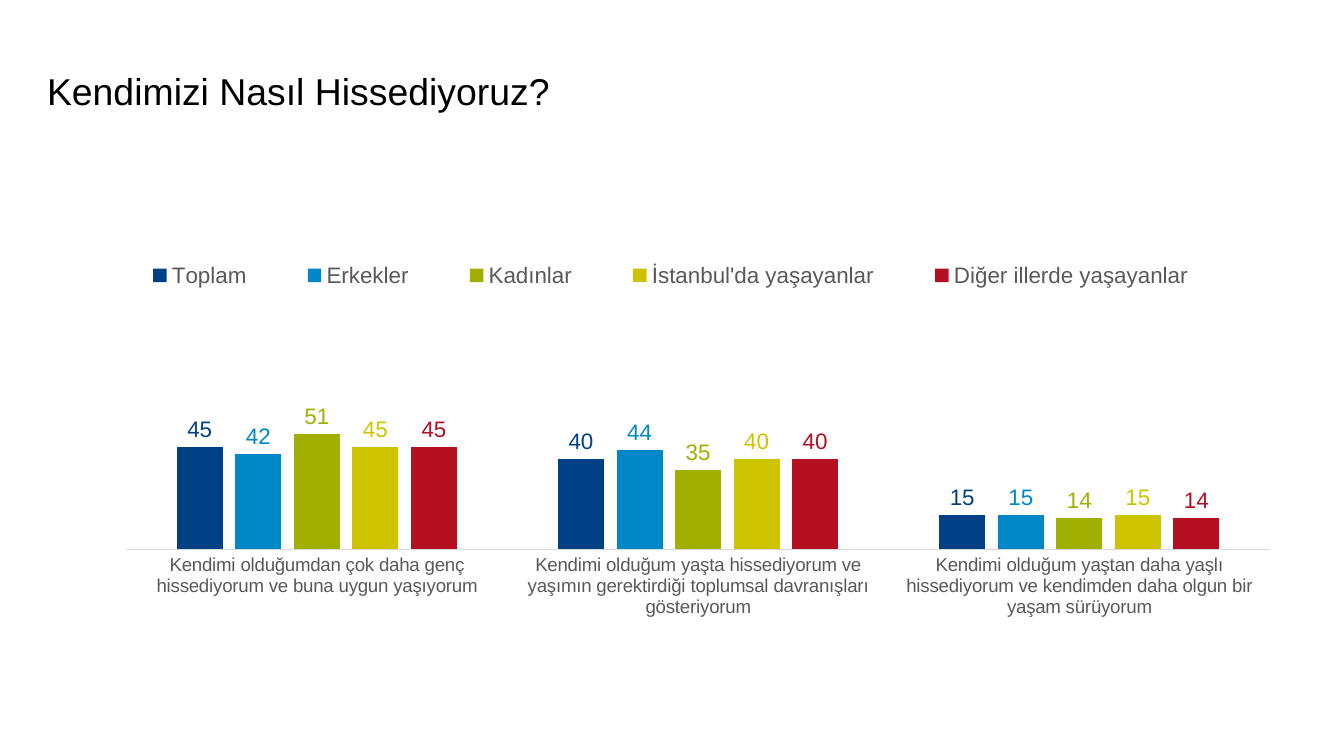
"""Build a slide with a clustered column chart on how old people feel."""
import pptx
import pptx.chart.data
import pptx.dml.color
import pptx.enum.chart
import pptx.enum.text
import pptx.oxml
import pptx.oxml.ns
import pptx.util

Inches = pptx.util.Inches

TITLE = "Kendimizi Nasıl Hissediyoruz?"
CATEGORIES = [
    "Kendimi olduğumdan çok daha genç hissediyorum ve buna uygun yaşıyorum",
    "Kendimi olduğum yaşta hissediyorum ve yaşımın gerektirdiği toplumsal davranışları gösteriyorum",
    "Kendimi olduğum yaştan daha yaşlı hissediyorum ve kendimden daha olgun bir yaşam sürüyorum",
]
SERIES = [
    ("Toplam", (45, 40, 15), "004186"),
    ("Erkekler", (42, 44, 15), "0087C8"),
    ("Kadınlar", (51, 35, 14), "A1AF00"),
    ("İstanbul'da yaşayanlar", (45, 40, 15), "CDC300"),
    ("Diğer illerde yaşayanlar", (45, 40, 14), "B50F22"),
]
CHART_WIDTH, CHART_HEIGHT = 8.9, 3.48
PLOT_AREA = (0.35, 0.55, 8.51, 1.69)
LEGEND_AREA = (0.15, 0.01, 8.5, 0.38)


def rgb(color):
    return pptx.dml.color.RGBColor.from_string(color)


def style_font(font, size, color):
    font.name = "Arial"
    font.size = pptx.util.Pt(size)
    font.bold = False
    font.color.rgb = rgb(color)


def layout_element(area, inner=False):
    target = '<c:layoutTarget val="inner"/>' if inner else ""
    modes = "".join(f'<c:{axis}Mode val="edge"/>' for axis in "xy")
    sizes = "".join(
        f'<c:{key} val="{length / whole:.4f}"/>'
        for key, length, whole in zip("xywh", area, (CHART_WIDTH, CHART_HEIGHT) * 2)
    )
    return pptx.oxml.parse_xml(
        f'<c:layout {pptx.oxml.ns.nsdecls("c")}><c:manualLayout>'
        f"{target}{modes}{sizes}</c:manualLayout></c:layout>"
    )


def place(element, layout, before):
    for old in element.findall(pptx.oxml.ns.qn("c:layout")):
        element.remove(old)
    if before:
        element.find(pptx.oxml.ns.qn(before)).addprevious(layout)
    else:
        element.insert(0, layout)


def add_title(slide):
    title = slide.shapes.title
    title.left, title.top = Inches(0.35), Inches(0.21)
    title.width, title.height = Inches(7.01), Inches(0.63)
    frame = title.text_frame
    frame.text = TITLE
    frame.word_wrap = True
    frame.auto_size = pptx.enum.text.MSO_AUTO_SIZE.NONE
    frame.vertical_anchor = pptx.enum.text.MSO_ANCHOR.BOTTOM
    frame.margin_left = frame.margin_right = frame.margin_top = frame.margin_bottom = 0
    paragraph = frame.paragraphs[0]
    paragraph.alignment = pptx.enum.text.PP_ALIGN.LEFT
    style_font(paragraph.font, 20, "000000")


def add_feeling_chart(slide):
    data = pptx.chart.data.CategoryChartData(number_format="0")
    data.categories = CATEGORIES
    for name, values, _ in SERIES:
        data.add_series(name, values)
    chart = slide.shapes.add_chart(
        pptx.enum.chart.XL_CHART_TYPE.COLUMN_CLUSTERED,
        Inches(0.59), Inches(1.85), Inches(CHART_WIDTH), Inches(CHART_HEIGHT), data,
    ).chart
    chart.has_title = False
    style_font(chart.font, 10, "000000")

    plot = chart.plots[0]
    plot.gap_width, plot.overlap = 219, -27
    plot.vary_by_categories = False
    for series, (_, _, color) in zip(plot.series, SERIES):
        series.format.fill.solid()
        series.format.fill.fore_color.rgb = rgb(color)
        labels = series.data_labels
        labels.show_value = True
        labels.number_format, labels.number_format_is_linked = "0", False
        labels.position = pptx.enum.chart.XL_LABEL_POSITION.OUTSIDE_END
        style_font(labels.font, 12, color)

    category_axis = chart.category_axis
    category_axis.major_tick_mark = pptx.enum.chart.XL_TICK_MARK.NONE
    category_axis.format.line.color.rgb = rgb("D9D9D9")
    category_axis.format.line.width = pptx.util.Pt(0.75)
    style_font(category_axis.tick_labels.font, 10, "595959")

    value_axis = chart.value_axis
    value_axis.minimum_scale, value_axis.maximum_scale = 0, 100
    value_axis.has_major_gridlines = False
    value_axis.visible = False

    chart.has_legend = True
    legend = chart.legend
    legend.position = pptx.enum.chart.XL_LEGEND_POSITION.BOTTOM
    legend.include_in_layout = False
    style_font(legend.font, 12, "595959")
    plot_area = chart.element.find(".//" + pptx.oxml.ns.qn("c:plotArea"))
    legend_box = chart.element.find(".//" + pptx.oxml.ns.qn("c:legend"))
    place(plot_area, layout_element(PLOT_AREA, inner=True), None)
    place(legend_box, layout_element(LEGEND_AREA), "c:overlay")


def main():
    presentation = pptx.Presentation()
    presentation.slide_width = Inches(10)
    presentation.slide_height = presentation.slide_width * 9 // 16
    slide = presentation.slides.add_slide(presentation.slide_layouts[5])
    add_title(slide)
    add_feeling_chart(slide)
    presentation.save("out.pptx")


if __name__ == "__main__":
    main()
